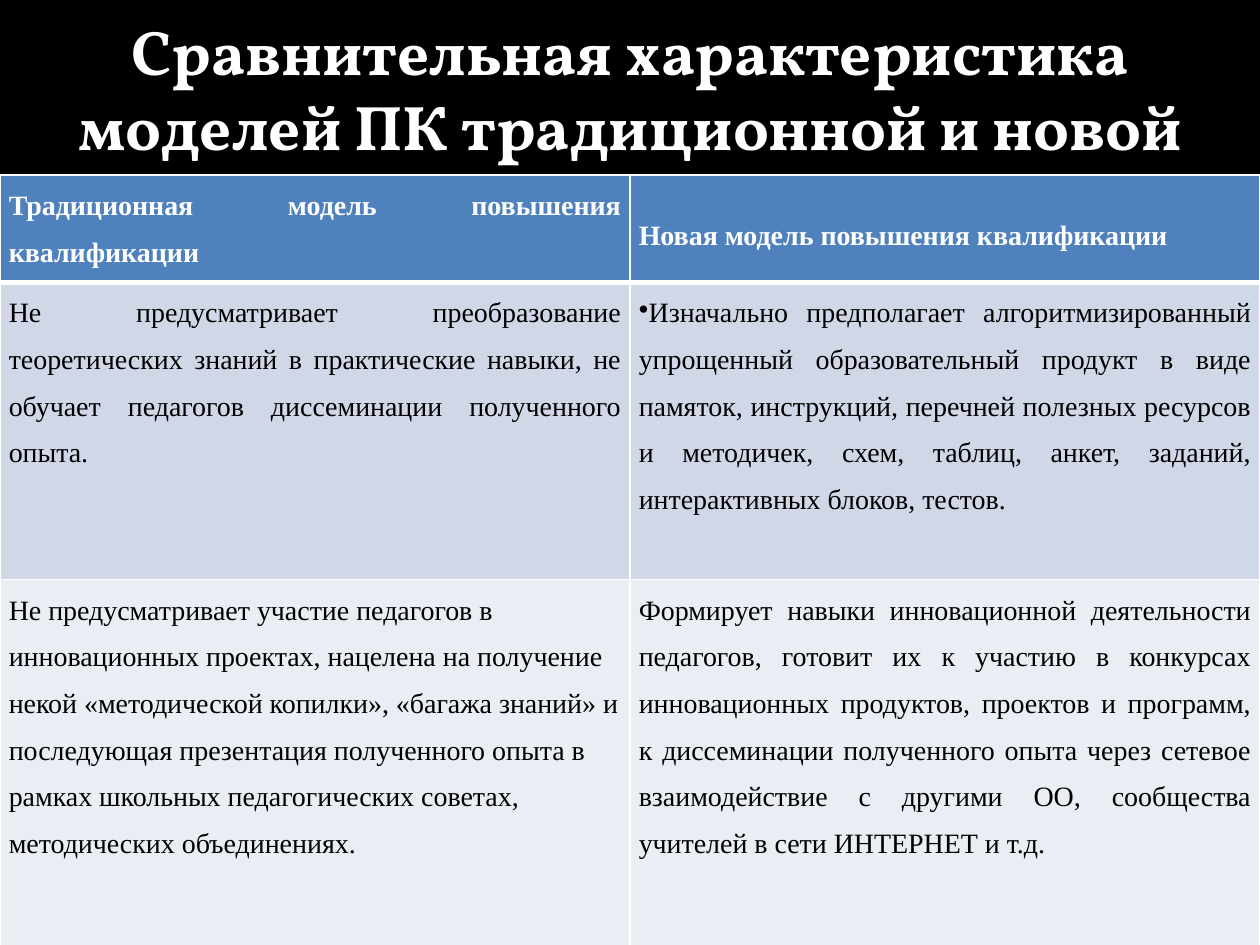
from dataclasses import dataclass

from lxml import etree
from pptx import Presentation
from pptx import util as u
from pptx.dml.color import RGBColor
from pptx.enum import text
from pptx.oxml import ns

BLACK = RGBColor(0x00, 0x00, 0x00)
WHITE = RGBColor(0xFF, 0xFF, 0xFF)
BLUE = RGBColor(0x4F, 0x81, 0xBD)
MIST = RGBColor(0xD0, 0xD8, 0xE8)
PALE = RGBColor(0xE9, 0xED, 0xF4)
JUST = text.PP_ALIGN.JUSTIFY
LEFT = text.PP_ALIGN.LEFT
TOP = text.MSO_ANCHOR.TOP
MID = text.MSO_ANCHOR.MIDDLE
WIDE, HIGH = u.Inches(10), u.Inches(7.5)
HEAD = u.Inches(1.39)


@dataclass
class Entry:
    words: str
    align: text.PP_ALIGN = JUST
    anchor: text.MSO_ANCHOR = TOP
    after: int = 0
    bullet: str = ""


@dataclass
class Band:
    high: float
    fill: RGBColor
    ink: RGBColor
    bold: bool
    top: int
    base: int
    cells: tuple[Entry, Entry]


BANDS = (
    Band(0.85, BLUE, WHITE, True, 1, 3, (
        Entry("Традиционная модель повышения квалификации"),
        Entry("Новая модель повышения квалификации", anchor=MID, after=8),
    )),
    Band(2.36, MIST, BLACK, False, 3, 1, (
        Entry("Не предусматривает преобразование теоретических знаний в "
              "практические навыки, не обучает педагогов диссеминации "
              "полученного опыта."),
        Entry("Изначально предполагает алгоритмизированный упрощенный "
              "образовательный продукт в виде памяток, инструкций, перечней "
              "полезных ресурсов и методичек, схем, таблиц, анкет, заданий, "
              "интерактивных блоков, тестов.", bullet="•"),
    )),
    Band(2.95, PALE, BLACK, False, 1, 1, (
        Entry("Не предусматривает участие педагогов в инновационных проектах, "
              "нацелена на получение некой «методической копилки», «багажа "
              "знаний» и последующая презентация полученного опыта в рамках "
              "школьных педагогических советах, методических объединениях.",
              align=LEFT),
        Entry("Формирует навыки инновационной деятельности педагогов, готовит "
              "их к участию в конкурсах инновационных продуктов, проектов и "
              "программ, к диссеминации полученного опыта через сетевое "
              "взаимодействие с другими ОО, сообщества учителей в сети "
              "ИНТЕРНЕТ и т.д."),
    )),
)


def add_run(para, words: str, face: str, size: int, ink: RGBColor, bold: bool) -> None:
    run = para.add_run()
    run.text = words
    run.font.name = face
    run.font.size = u.Pt(size)
    run.font.color.rgb = ink
    run.font.bold = bold


def add_edge(cell, side: str, width: int) -> None:
    props = cell._tc.get_or_add_tcPr()
    line = etree.SubElement(props, ns.qn(f"a:ln{side}"), w=str(u.Pt(width)))
    fill = etree.SubElement(line, ns.qn("a:solidFill"))
    etree.SubElement(fill, ns.qn("a:srgbClr"), val=str(WHITE))


def draw_cell(cell, entry: Entry, band: Band) -> None:
    for side, width in (("L", 1), ("R", 1), ("T", band.top), ("B", band.base)):
        add_edge(cell, side, width)
    cell.fill.solid()
    cell.fill.fore_color.rgb = band.fill
    cell.margin_left = cell.margin_right = u.Inches(0.07)
    cell.margin_top = cell.margin_bottom = 0
    cell.vertical_anchor = entry.anchor
    para = cell.text_frame.paragraphs[0]
    para.alignment = entry.align
    para.line_spacing = 1.5
    para.space_after = u.Pt(entry.after)
    if entry.bullet:
        etree.SubElement(para._p.get_or_add_pPr(), ns.qn("a:buChar"), char=entry.bullet)
    add_run(para, entry.words, "Times New Roman", 16, band.ink, band.bold)


def draw_title(slide, words: str) -> None:
    frame = slide.shapes.add_textbox(0, 0, WIDE, HEAD).text_frame
    frame.word_wrap = True
    frame.vertical_anchor = MID
    para = frame.paragraphs[0]
    para.alignment = text.PP_ALIGN.CENTER
    add_run(para, words, "Vollkorn", 36, WHITE, True)


def draw_table(slide, bands: tuple[Band, ...]) -> None:
    high = u.Inches(sum(band.high for band in bands))
    table = slide.shapes.add_table(len(bands), 2, 0, HEAD, WIDE, high).table
    for row, band in zip(table.rows, bands):
        row.height = u.Inches(band.high)
        for cell, entry in zip(row.cells, band.cells):
            draw_cell(cell, entry, band)


def main() -> None:
    deck = Presentation()
    deck.slide_width, deck.slide_height = WIDE, HIGH
    slide = deck.slides.add_slide(deck.slide_layouts[6])
    slide.background.fill.solid()
    slide.background.fill.fore_color.rgb = BLACK
    draw_title(slide, "Сравнительная характеристика моделей ПК традиционной и новой")
    draw_table(slide, BANDS)
    deck.save("out.pptx")


if __name__ == "__main__":
    main()
